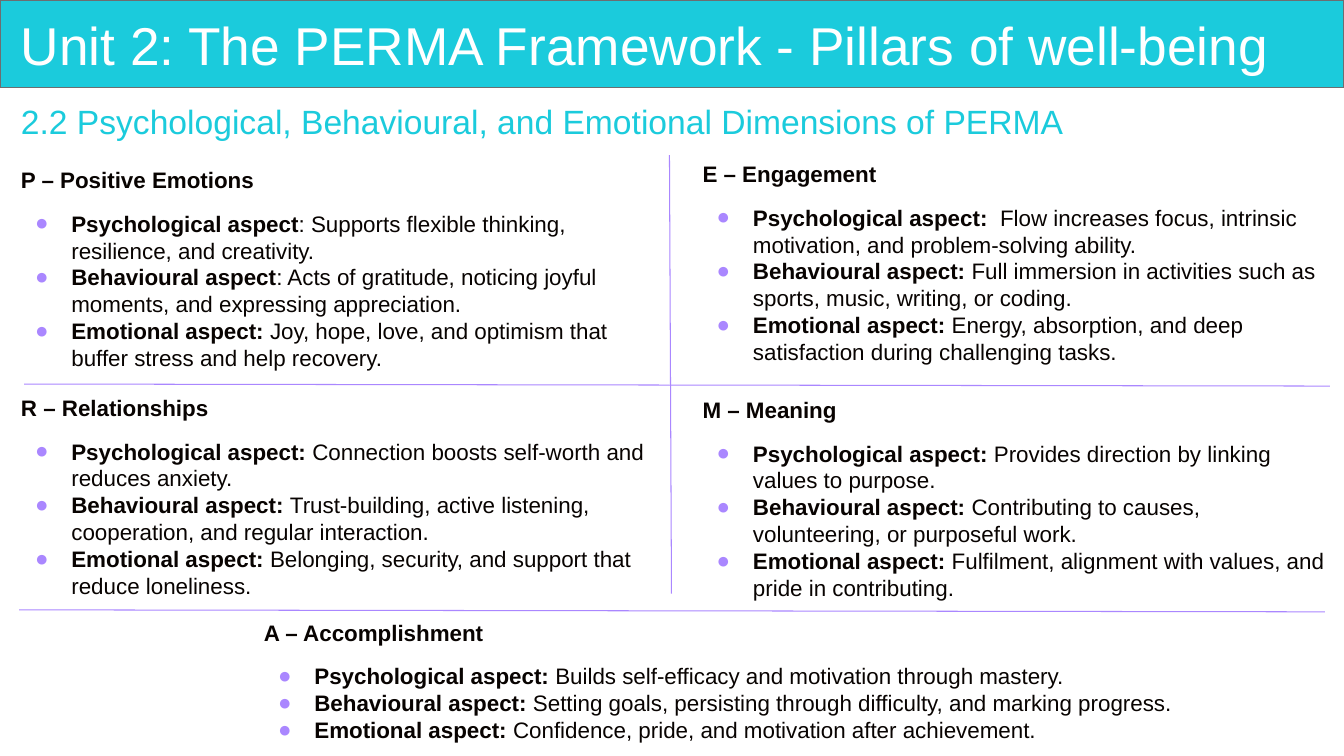
from pptx import Presentation
from pptx.dml.color import RGBColor
from pptx.enum.shapes import MSO_CONNECTOR as Conn, MSO_SHAPE as Shape
from pptx.enum.text import MSO_ANCHOR as Anchor, PP_ALIGN as Align
from pptx.oxml.ns import qn
from pptx.util import Inches, Pt
from lxml.etree import SubElement

CYAN, VIOLET, INK, GREY, WHITE = "1BCBDC", "AA87FF", "080301", "6C6E70", "FFFFFF"

# Each pillar: box, heading, points; "|" ends the bold part of a point
PILLARS = [
    ((0.11, 1.6, 6.46, 2.33), "P – Positive Emotions", [
        "Psychological aspect|: Supports flexible thinking, resilience, and creativity.",
        "Behavioural aspect|: Acts of gratitude, noticing joyful moments, and expressing appreciation.",
        "Emotional aspect:| Joy, hope, love, and optimism that buffer stress and help recovery."]),
    ((6.87, 1.54, 6.46, 2.15), "E – Engagement", [
        "Psychological aspect: | Flow increases focus, intrinsic motivation, and problem-solving ability.",
        "Behavioural aspect:| Full immersion in activities such as sports, music, writing, or coding.",
        "Emotional aspect:| Energy, absorption, and deep satisfaction during challenging tasks."]),
    ((0.11, 3.86, 6.46, 2.15), "R – Relationships", [
        "Psychological aspect:| Connection boosts self-worth and reduces anxiety.",
        "Behavioural aspect: |Trust-building, active listening, cooperation, and regular interaction.",
        "Emotional aspect:| Belonging, security, and support that reduce loneliness."]),
    ((6.87, 3.88, 6.46, 2.15), "M – Meaning", [
        "Psychological aspect: |Provides direction by linking values to purpose.",
        "Behavioural aspect:| Contributing to causes, volunteering, or purposeful work.",
        "Emotional aspect: |Fulfilment, alignment with values, and pride in contributing."]),
    ((2.52, 6.09, 9.63, 1.28), "A – Accomplishment", [
        "Psychological aspect:| Builds self-efficacy and motivation through mastery.",
        "Behavioural aspect: |Setting goals, persisting through difficulty, and marking progress.",
        "Emotional aspect: |Confidence, pride, and motivation after achievement."]),
]

# Left, top, right, bottom of each rule
RULES = [(0.24, 3.81, 13.19, 3.83), (6.64, 1.54, 6.66, 5.89), (0.19, 6.05, 13.14, 6.07)]


def rgb(code):
    return RGBColor.from_string(code)


def add_text(para, text, size=16, color=INK, bold=False):
    run = para.add_run()
    run.text = text
    font = run.font
    font.name, font.size, font.bold = "Arial", Pt(size), bold
    font.color.rgb = rgb(color)


def add_frame(slide, box, insets=(0.1, 0.05, 0.1, 0.05), anchor=Anchor.TOP):
    frame = slide.shapes.add_textbox(*map(Inches, box)).text_frame
    frame.word_wrap = True
    frame.vertical_anchor = anchor
    (frame.margin_left, frame.margin_top,
     frame.margin_right, frame.margin_bottom) = map(Inches, insets)
    return frame


def add_bullet(para):
    props = para._p.get_or_add_pPr()
    props.set("marL", str(Inches(0.5)))
    props.set("indent", str(Inches(-0.36)))
    color = SubElement(props, qn("a:buClr"))
    SubElement(color, qn("a:srgbClr"), val=VIOLET)
    SubElement(props, qn("a:buFont"), typeface="Arial")
    SubElement(props, qn("a:buChar"), char="●")


def add_banner(slide, box, title):
    left, top, width, height = box
    bar = slide.shapes.add_shape(Shape.RECTANGLE, *map(Inches, box))
    bar.shadow.inherit = False
    bar.fill.solid()
    bar.fill.fore_color.rgb = rgb(CYAN)
    bar.line.color.rgb = rgb(GREY)
    bar.line.width = Pt(1)
    inner = (left + 0.11, top + 0.09, width - 0.27, height - 0.09)
    frame = add_frame(slide, inner, (0.1, 0.06, 0.06, 0.06), Anchor.MIDDLE)
    para = frame.paragraphs[0]
    para.line_spacing = 0.9
    add_text(para, title, size=38, color=WHITE)


def add_subtitle(slide, box, text):
    para = add_frame(slide, box, anchor=Anchor.MIDDLE).paragraphs[0]
    para.alignment = Align.JUSTIFY
    para.line_spacing = 0.9
    add_text(para, text, size=24, color=CYAN)


def add_pillar(slide, box, heading, points):
    frame = add_frame(slide, box)
    head = frame.paragraphs[0]
    head.space_before = Pt(12)
    add_text(head, heading, bold=True)
    for i, point in enumerate(points):
        para = frame.add_paragraph()
        para.space_before = Pt(0 if i else 12)
        add_bullet(para)
        label, detail = point.split("|")
        add_text(para, label, bold=True)
        add_text(para, detail)


def add_rule(slide, ends):
    rule = slide.shapes.add_connector(Conn.STRAIGHT, *map(Inches, ends))
    rule.line.color.rgb = rgb(VIOLET)
    rule.line.width = Pt(0.75)
    SubElement(rule._element.spPr, qn("a:effectLst"))


def main():
    deck = Presentation()
    deck.slide_width, deck.slide_height = Inches(13.33), Inches(7.5)
    slide = deck.slides.add_slide(deck.slide_layouts[6])
    # Heading
    add_banner(slide, (0, 0, 13.33, 0.87), "Unit 2: The PERMA Framework - Pillars of well-being")
    add_subtitle(slide, (0.11, 0.93, 13.06, 0.6),
                 "2.2 Psychological, Behavioural, and Emotional Dimensions of PERMA")
    # Pillars and the rules between them
    for box, heading, points in PILLARS:
        add_pillar(slide, box, heading, points)
    for ends in RULES:
        add_rule(slide, ends)
    deck.save("out.pptx")


if __name__ == "__main__":
    main()
